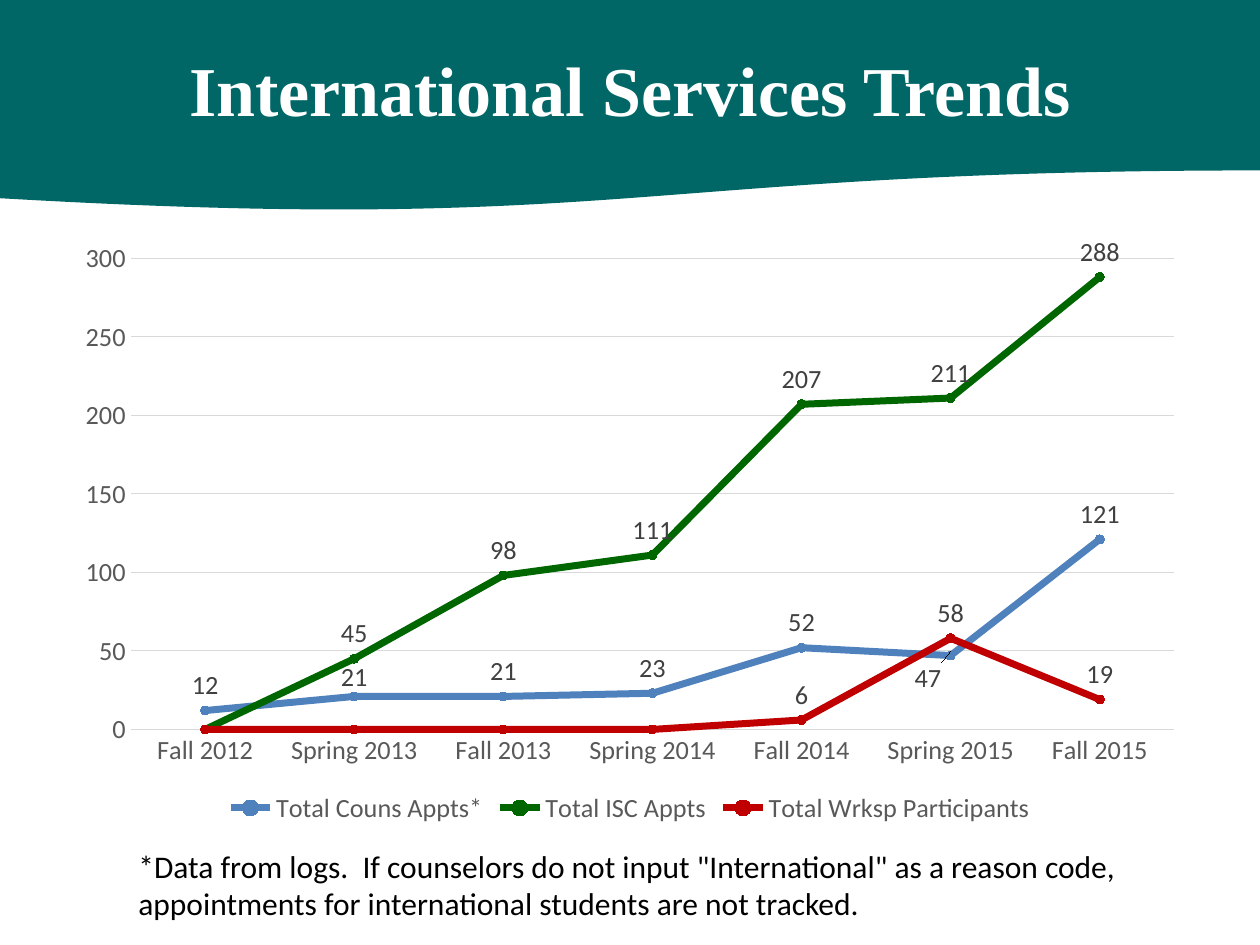
from dataclasses import dataclass

from lxml.etree import SubElement
from pptx import Presentation
from pptx.chart.data import CategoryChartData
from pptx.dml.color import RGBColor
from pptx.enum.chart import (XL_CHART_TYPE, XL_LABEL_POSITION, XL_LEGEND_POSITION,
                             XL_MARKER_STYLE, XL_TICK_MARK)
from pptx.enum.shapes import MSO_SHAPE
from pptx.enum.text import MSO_ANCHOR, PP_ALIGN
from pptx.oxml.ns import qn
from pptx.util import Pt

EMU_PER_PX = 9144
LABEL_EXTENSION = "{CE6537A1-D6FC-4f65-9D91-7224C49458BB}"
CHART_2012 = "http://schemas.microsoft.com/office/drawing/2012/chart"


@dataclass(frozen=True)
class Theme:
    """Colours, fonts and type sizes of the slide."""
    teal: str = "006666"
    white: str = "FFFFFF"
    black: str = "000000"
    axis_text: str = "595959"
    label_text: str = "404040"
    grid: str = "D9D9D9"
    heading_font: str = "Times New Roman"
    body_font: str = "Calibri"
    title_size: int = 40
    note_size: int = 18
    chart_size: int = 15


THEME = Theme()
TERMS = ["Fall 2012", "Spring 2013", "Fall 2013", "Spring 2014",
         "Fall 2014", "Spring 2015", "Fall 2015"]
SERIES = [
    ("Total Couns Appts*", "4F81BD", (12, 21, 21, 23, 52, 47, 121)),
    ("Total ISC Appts", "006600", (0, 45, 98, 111, 207, 211, 288)),
    ("Total Wrksp Participants", "C00000", (0, 0, 0, 0, 6, 58, 19)),
]
LABEL_SHIFTS = {1: (0, 0.01), 5: (-0.02, 0.08)}


def px(*lengths):
    """Turn px lengths into EMU."""
    return [length * EMU_PER_PX for length in lengths]


def set_attributes(target, values):
    """Set each attribute named in a dict of format values."""
    for name, value in values.items():
        setattr(target, name, value)


def style_font(font, size, color, name=THEME.body_font, bold=False):
    """Give a font its size, colour, face and weight."""
    set_attributes(font, {"size": Pt(size), "name": name, "bold": bold})
    font.color.rgb = RGBColor.from_string(color)


def style_line(line, color, width):
    """Give a line its colour and width in points."""
    line.color.rgb = RGBColor.from_string(color)
    line.width = Pt(width)


def add_text(slide, box, text, font_values, frame_values, alignment):
    """Place one paragraph of wrapped text in a box."""
    frame = slide.shapes.add_textbox(*px(*box)).text_frame
    set_attributes(frame, {"word_wrap": True, "vertical_anchor": MSO_ANCHOR.TOP,
                           **frame_values})
    paragraph = frame.paragraphs[0]
    paragraph.alignment = alignment
    run = paragraph.add_run()
    run.text = text
    style_font(run.font, **font_values)


def add_header(slide, left, top, width, height):
    """Draw the waved banner with the title on it."""
    banner = slide.shapes.add_shape(MSO_SHAPE.FLOWCHART_DOCUMENT,
                                    *px(left, top, width, height))
    banner.shadow.inherit = False
    banner.fill.solid()
    banner.fill.fore_color.rgb = RGBColor.from_string(THEME.teal)
    style_line(banner.line, THEME.teal, 2)
    margins = dict.fromkeys(
        ("margin_left", "margin_top", "margin_right", "margin_bottom"), px(4)[0])
    add_text(slide, (left + 50, top + 33, width - 100, 86),
             "International Services Trends",
             {"size": THEME.title_size, "color": THEME.white,
              "name": THEME.heading_font, "bold": True},
             margins, PP_ALIGN.CENTER)


def style_axes(chart):
    """Format both axes and the horizontal gridlines."""
    for axis in (chart.category_axis, chart.value_axis):
        set_attributes(axis, {"major_tick_mark": XL_TICK_MARK.NONE,
                              "minor_tick_mark": XL_TICK_MARK.NONE})
        style_font(axis.tick_labels.font, THEME.chart_size, THEME.axis_text)
    style_line(chart.category_axis.format.line, THEME.grid, 0.75)
    value_axis = chart.value_axis
    set_attributes(value_axis, {"minimum_scale": 0, "maximum_scale": 300,
                                "major_unit": 50, "has_major_gridlines": True})
    value_axis.format.line.fill.background()
    style_line(value_axis.major_gridlines.format.line, THEME.grid, 0.75)


def style_series(series, color):
    """Format a line, its markers and its labels, leaving zeros unlabelled."""
    series.smooth = False
    style_line(series.format.line, color, 4)
    marker = series.marker
    set_attributes(marker, {"style": XL_MARKER_STYLE.CIRCLE, "size": 5})
    marker.format.fill.solid()
    marker.format.fill.fore_color.rgb = RGBColor.from_string(color)
    style_line(marker.format.line, color, 0.75)
    labels = series.data_labels
    set_attributes(labels, {"show_value": True, "number_format": "0;;",
                            "number_format_is_linked": False,
                            "position": XL_LABEL_POSITION.ABOVE})
    style_font(labels.font, THEME.chart_size, THEME.label_text)


def shift_labels(chart, series):
    """Move crowded labels by fractions of the chart size, without leader lines."""
    for index in LABEL_SHIFTS:
        label = series.points[index].data_label
        style_font(label.font, THEME.chart_size, THEME.label_text)
        label.position = XL_LABEL_POSITION.ABOVE
    group = chart.element.xpath(".//c:ser[1]/c:dLbls")[0]
    for element, shift in zip(group.findall(qn("c:dLbl")), LABEL_SHIFTS.values()):
        layout = SubElement(element, qn("c:layout"))
        element.insert(1, layout)
        manual = SubElement(layout, qn("c:manualLayout"))
        for axis, fraction in zip("xy", shift):
            SubElement(manual, qn(f"c:{axis}")).set("val", str(fraction))
    extension = SubElement(SubElement(group, qn("c:extLst")), qn("c:ext"),
                           uri=LABEL_EXTENSION)
    SubElement(extension, f"{{{CHART_2012}}}showLeaderLines",
               nsmap={"c15": CHART_2012}).set("val", "0")


def add_trend_chart(slide, left, top, width, height):
    """Draw the line chart of appointments and participants by term."""
    data = CategoryChartData()
    data.categories = TERMS
    for name, _, values in SERIES:
        data.add_series(name, values)
    chart = slide.shapes.add_chart(XL_CHART_TYPE.LINE_MARKERS,
                                   *px(left, top, width, height), data).chart
    set_attributes(chart, {"has_title": False, "has_legend": True})
    style_font(chart.font, 10, THEME.black)
    set_attributes(chart.legend, {"position": XL_LEGEND_POSITION.BOTTOM,
                                  "include_in_layout": False})
    style_font(chart.legend.font, THEME.chart_size, THEME.axis_text)
    style_axes(chart)
    plot = chart.plots[0]
    plot.vary_by_categories = False
    for series, (_, color, _) in zip(plot.series, SERIES):
        style_series(series, color)
    shift_labels(chart, plot.series[0])


def add_footnote(slide, left, top, width, height):
    """Write the note on where the data come from."""
    add_text(slide, (left, top, width, height),
             '*Data from logs.  If counselors do not input "International" as a '
             "reason code, appointments for international students are not tracked.",
             {"size": THEME.note_size, "color": THEME.black}, {}, PP_ALIGN.LEFT)


def main():
    """Build and save the slide."""
    presentation = Presentation()
    slide_width, slide_height = px(1000, 750)
    set_attributes(presentation, {"slide_width": slide_width,
                                  "slide_height": slide_height})
    slide = presentation.slides.add_slide(presentation.slide_layouts[6])
    add_header(slide, 0, 0, 1000, 167)
    add_trend_chart(slide, 50, 183, 900, 475)
    add_footnote(slide, 100, 667, 850, 71)
    presentation.save("out.pptx")


if __name__ == "__main__":
    main()
